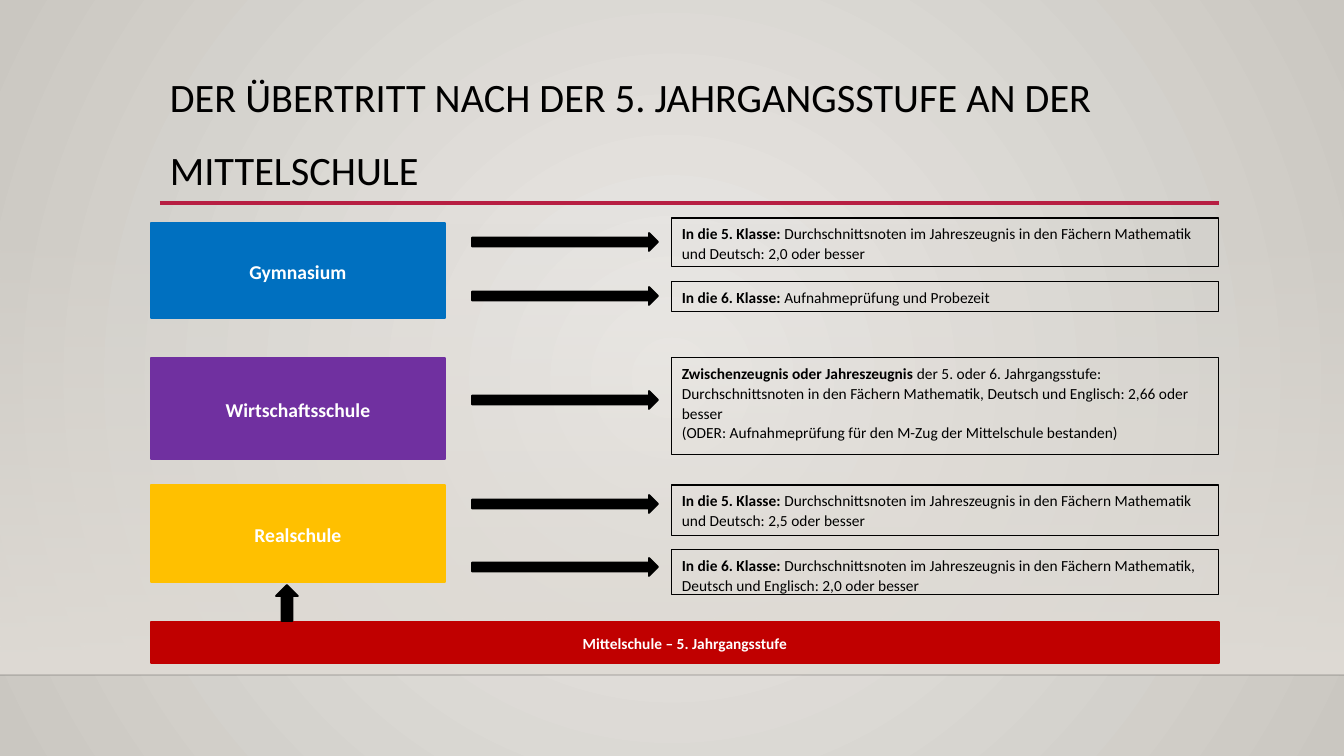
from lxml.etree import SubElement
from pptx import Presentation
from pptx.dml.color import RGBColor
from pptx.enum.shapes import MSO_CONNECTOR, MSO_SHAPE
from pptx.enum.text import MSO_ANCHOR, PP_ALIGN
from pptx.oxml.ns import qn
from pptx.util import Emu, Pt

EMU_PER_PX = 914400 / 100.8


def px(*lengths):
    return [Emu(round(length * EMU_PER_PX)) for length in lengths]


def color(hex_string):
    return RGBColor.from_string(hex_string)


presentation = Presentation()
presentation.slide_width, presentation.slide_height = px(1344, 756)
slide = presentation.slides.add_slide(presentation.slide_layouts[6])
shapes = slide.shapes

background = slide.background.fill
background.gradient()
for stop, shade in zip(background.gradient_stops, ("ECEAE7", "CAC7C1")):
    stop.color.rgb = color(shade)
linear = next(slide._element.iter(qn("a:lin")))
gradient = linear.getparent()
gradient.remove(linear)
circle = SubElement(gradient, qn("a:path"), path="circle")
SubElement(circle, qn("a:fillToRect"), l="50000", t="50000", r="50000", b="50000")

floor = shapes.add_shape(MSO_SHAPE.RECTANGLE, *px(0, 223, 1344, 452))
floor.shadow.inherit = False
floor.line.fill.background()
floor.fill.gradient()
floor.fill.gradient_angle = 270
for stop in floor.fill.gradient_stops:
    stop.color.rgb = color("DFDBD5")
SubElement(next(floor._element.iter(qn("a:srgbClr"))), qn("a:alpha"), val="0")

for left, right, y, shade, width, opacity in (
    (0, 1344, 675, "000001", 1, 20),
    (160, 1219, 203, "B71E42", 2.5, 100),
):
    rule = shapes.add_connector(MSO_CONNECTOR.STRAIGHT, *px(left, y, right, y))
    rule.line.color.rgb = color(shade)
    rule.line.width = Pt(width)
    SubElement(next(rule._element.iter(qn("a:srgbClr"))), qn("a:alpha"), val=str(opacity * 1000))
    SubElement(rule._element.spPr, qn("a:effectLst"))

title = shapes.add_textbox(*px(160, 43, 1059, 161))
title.text_frame.word_wrap = True
paragraph = title.text_frame.paragraphs[0]
paragraph.text = "DER ÜBERTRITT NACH DER 5. JAHRGANGSSTUFE AN DER MITTELSCHULE"
paragraph.line_spacing = 1.5
paragraph.font.name = "Calibri"
paragraph.font.size = Pt(28.8)
paragraph.font.color.rgb = color("000000")

schools = (
    ("Mittelschule – 5. Jahrgangsstufe", 622, 1068, 41, "C00000", 11),
    ("Realschule", 485, 294, 97, "FFC000", 14),
    ("Wirtschaftsschule", 358, 294, 101, "7030A0", 14),
    ("Gymnasium", 223, 294, 95, "0070C0", 14),
)
for name, top, width, height, shade, size in schools:
    school = shapes.add_shape(MSO_SHAPE.RECTANGLE, *px(151, top, width, height))
    school.shadow.inherit = False
    school.fill.solid()
    school.fill.fore_color.rgb = color(shade)
    school.line.color.rgb = color(shade)
    school.line.width = Pt(1.25)
    school.text_frame.word_wrap = True
    school.text_frame.vertical_anchor = MSO_ANCHOR.MIDDLE
    paragraph = school.text_frame.paragraphs[0]
    paragraph.text = name
    paragraph.alignment = PP_ALIGN.CENTER
    paragraph.line_spacing = 1.07
    paragraph.space_after = Pt(8)
    paragraph.font.name = "Calibri"
    paragraph.font.size = Pt(size)
    paragraph.font.bold = True
    paragraph.font.color.rgb = color("FFFFFF")

arrows = [(MSO_SHAPE.UP_ARROW, 276, 585, 22, 36)]
for middle in (242, 296, 400, 504, 567):
    arrows.append((MSO_SHAPE.RIGHT_ARROW, 472, middle - 9, 186, 18))
for preset, *frame in arrows:
    arrow = shapes.add_shape(preset, *px(*frame))
    arrow.shadow.inherit = False
    arrow.fill.solid()
    arrow.fill.fore_color.rgb = color("000000")
    arrow.line.color.rgb = color("000000")
    arrow.line.width = Pt(1.25)

requirements = (
    (218, 49, "In die 5. Klasse:",
     [" Durchschnittsnoten im Jahreszeugnis in den Fächern Mathematik und Deutsch: 2,0 oder besser"]),
    (282, 30, "In die 6. Klasse:", [" Aufnahmeprüfung und Probezeit"]),
    (358, 97, "Zwischenzeugnis oder Jahreszeugnis ",
     ["der 5. oder 6. Jahrgangsstufe: Durchschnittsnoten in den Fächern Mathematik, "
      "Deutsch und Englisch: 2,66 oder besser",
      "(ODER: Aufnahmeprüfung für den M-Zug der Mittelschule bestanden)"]),
    (485, 51, "In die 5. Klasse:",
     [" Durchschnittsnoten im Jahreszeugnis in den Fächern Mathematik und Deutsch: 2,5 oder besser"]),
    (550, 45, "In die 6. Klasse:",
     [" Durchschnittsnoten im Jahreszeugnis in den Fächern Mathematik, "
      "Deutsch und Englisch: 2,0 oder besser"]),
)
for top, height, heading, details in requirements:
    box = shapes.add_shape(MSO_SHAPE.RECTANGLE, *px(672, top, 547, height))
    box.shadow.inherit = False
    box.fill.background()
    box.line.color.rgb = color("000000")
    box.line.width = Pt(0.75)
    box.text_frame.word_wrap = True
    box.text_frame.vertical_anchor = MSO_ANCHOR.TOP
    paragraph = box.text_frame.paragraphs[0]
    paragraph.alignment = PP_ALIGN.LEFT
    paragraph.line_spacing = 1.07
    paragraph.space_after = Pt(8)
    paragraph.font.name = "Calibri"
    paragraph.font.size = Pt(11)
    paragraph.font.color.rgb = color("000000")
    run = paragraph.add_run()
    run.text = heading
    run.font.bold = True
    for index, detail in enumerate(details):
        if index:
            paragraph.add_line_break()
        paragraph.add_run().text = detail

presentation.save("out.pptx")
